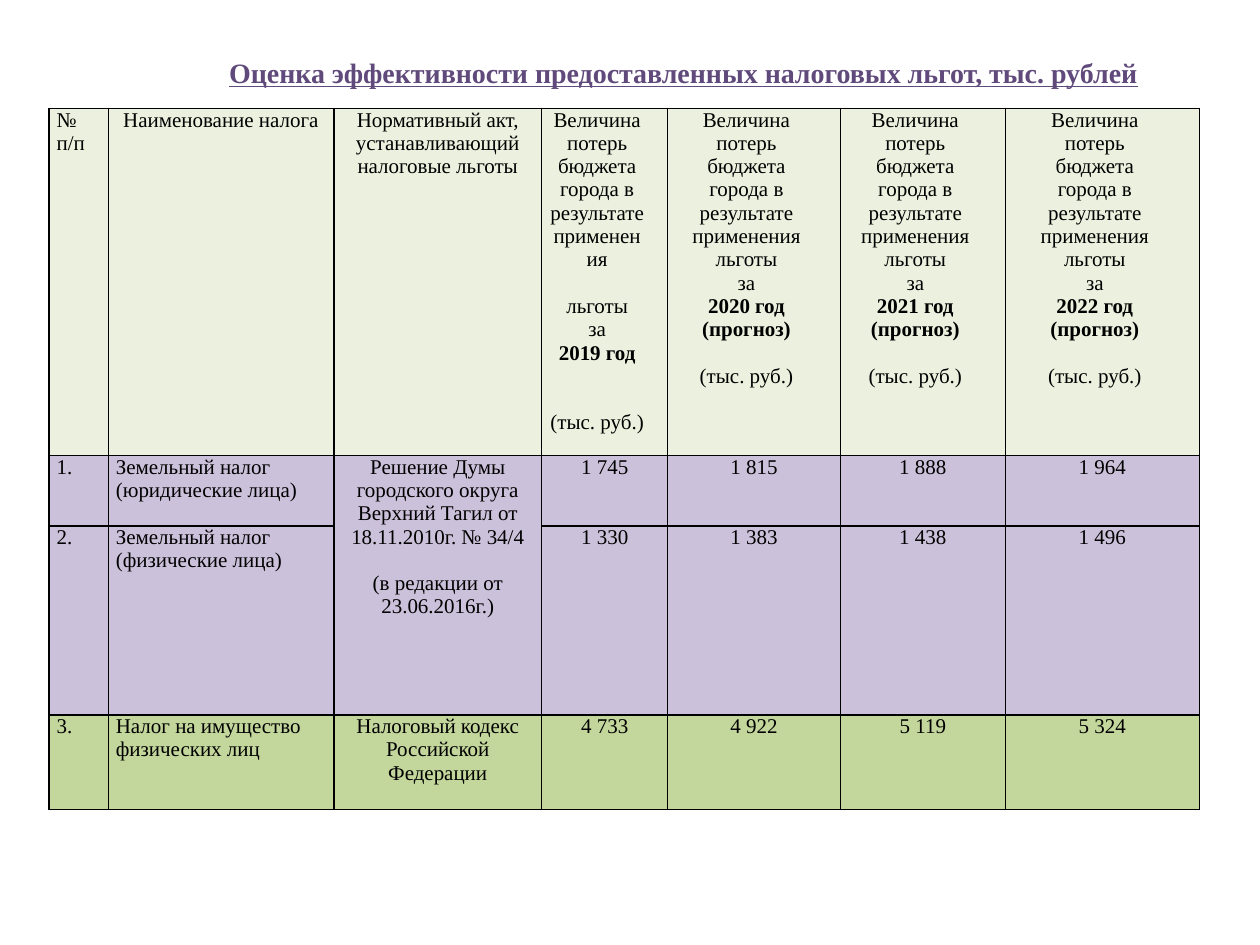
import pptx
import pptx.dml.color
import pptx.enum.text
import pptx.oxml
import pptx.oxml.ns
import pptx.util
from pptx.util import Inches

RGBColor = pptx.dml.color.RGBColor
ALIGN = pptx.enum.text.PP_ALIGN
BLACK = RGBColor(0x00, 0x00, 0x00)
PURPLE = RGBColor(0x60, 0x4A, 0x7B)
CREAM = RGBColor(0xEB, 0xF1, 0xDE)
LILAC = RGBColor(0xCC, 0xC1, 0xDA)
GREEN = RGBColor(0xC3, 0xD6, 0x9B)
FONT = "Times New Roman"
LINE = 13.3

WIDTHS = [0.47, 1.79, 1.65, 1, 1.37, 1.31, 1.54]
HEIGHTS = [2.6, 0.56, 1.5, 0.75]
FILLS = [CREAM, LILAC, LILAC, GREEN]
HEADS = ["№ п/п", "Наименование налога",
         "Нормативный акт, устанавливающий налоговые льготы"]
ROWS = [
    ["1.", "Земельный налог (юридические лица)", "",
     "1 745", "1 815", "1 888", "1 964"],
    ["2.", "Земельный налог (физические лица)", "",
     "1 330", "1 383", "1 438", "1 496"],
    ["3.", "Налог на имущество физических лиц",
     "Налоговый кодекс Российской Федерации",
     "4 733", "4 922", "5 119", "5 324"],
]
LOSS = ["Величина", "потерь", "бюджета", "города в", "результате"]


def write(frame, text, size=12, color=BLACK, bold=False, under=False,
          align=ALIGN.LEFT, gap=0, right=0):
    para = frame.paragraphs[0]
    if para.runs:
        para = frame.add_paragraph()
    para.alignment = align
    if gap:
        para.space_before = pptx.util.Pt(gap)
    if right:
        para._p.get_or_add_pPr().set("marR", str(Inches(right)))
    for i, line in enumerate(text.split("\n")):
        if i:
            para.add_line_break()
            mark = pptx.oxml.parse_xml(
                f'<a:rPr {pptx.oxml.ns.nsdecls("a")} sz="{size * 100}"/>')
            para._p[-1].append(mark)
        run = para.add_run()
        run.text = line
        font = run.font
        font.name = FONT
        font.size = pptx.util.Pt(size)
        font.bold = bold
        font.underline = under
        font.color.rgb = color


def frame_cell(cell, fill):
    props = cell._tc.get_or_add_tcPr()
    for side in "LRTB":
        props.append(pptx.oxml.parse_xml(
            f'<a:ln{side} {pptx.oxml.ns.nsdecls("a")} w="12700"><a:solidFill>'
            f'<a:srgbClr val="{BLACK}"/></a:solidFill></a:ln{side}>'))
    cell.fill.solid()
    cell.fill.fore_color.rgb = fill
    cell.margin_left = cell.margin_right = Inches(0.06)
    cell.margin_top = cell.margin_bottom = 0


def write_year(frame, year):
    first = year == 2019
    write(frame, "\n".join(LOSS), align=ALIGN.CENTER, right=0.12)
    write(frame, "применения", align=ALIGN.CENTER)
    write(frame, "льготы", align=ALIGN.CENTER, gap=LINE if first else 0)
    write(frame, "за", align=ALIGN.CENTER)
    write(frame, f"{year} год", bold=True, align=ALIGN.CENTER)
    if not first:
        write(frame, "(прогноз)", bold=True, align=ALIGN.CENTER)
    write(frame, "(тыс. руб.)", align=ALIGN.CENTER,
          gap=LINE * 2 if first else LINE)


def add_title(slide):
    box = slide.shapes.add_textbox(
        Inches(1.72), Inches(0.39), Inches(7.51), Inches(0.37))
    frame = box.text_frame
    frame.word_wrap = False
    frame.auto_size = pptx.enum.text.MSO_AUTO_SIZE.SHAPE_TO_FIT_TEXT
    write(frame, "Оценка эффективности предоставленных налоговых льгот, "
          "тыс. рублей", size=16, color=PURPLE, bold=True, under=True)


def add_grid(slide):
    table = slide.shapes.add_table(
        len(HEIGHTS), len(WIDTHS), Inches(0.39), Inches(0.86),
        Inches(sum(WIDTHS)), Inches(sum(HEIGHTS))).table
    for col, width in zip(table.columns, WIDTHS):
        col.width = Inches(width)
    for r, (height, fill) in enumerate(zip(HEIGHTS, FILLS)):
        table.rows[r].height = Inches(height)
        for c in range(len(WIDTHS)):
            frame_cell(table.cell(r, c), fill)
    for r, row in enumerate([HEADS] + ROWS):
        for c, text in enumerate(row):
            left = c == 0 or (c == 1 and r > 0)
            if text:
                write(table.cell(r, c).text_frame, text,
                      align=ALIGN.LEFT if left else ALIGN.CENTER)
    for c, year in enumerate(range(2019, 2023), len(HEADS)):
        write_year(table.cell(0, c).text_frame, year)
    act = table.cell(1, 2)
    act.merge(table.cell(2, 2))
    write(act.text_frame, "Решение Думы городского округа Верхний Тагил от "
          "18.11.2010г. № 34/4", align=ALIGN.CENTER)
    write(act.text_frame, "(в редакции от 23.06.2016г.)",
          align=ALIGN.CENTER, gap=LINE)


def main():
    deck = pptx.Presentation()
    deck.slide_width = Inches(10)
    deck.slide_height = Inches(7.5)
    slide = deck.slides.add_slide(deck.slide_layouts[6])
    add_title(slide)
    add_grid(slide)
    deck.save("out.pptx")


if __name__ == "__main__":
    main()
